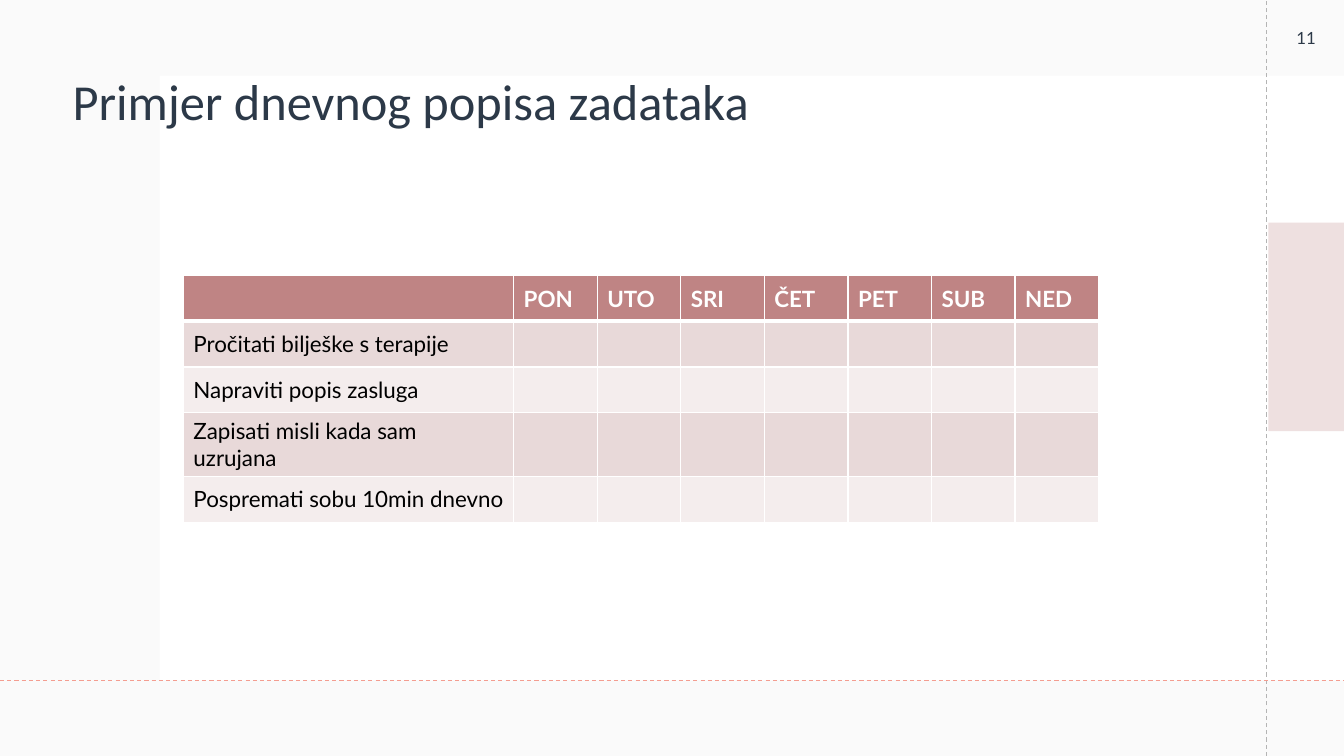
from lxml.etree import SubElement
from pptx import Presentation
from pptx.dml.color import RGBColor
from pptx.enum.dml import MSO_LINE
from pptx.enum.shapes import MSO_CONNECTOR, MSO_SHAPE
from pptx.enum.text import MSO_ANCHOR as ANCHOR, PP_ALIGN as ALIGN
from pptx.oxml.ns import qn
from pptx.util import Pt

W, H = 960, 540
EDGE = 54                      # margin band on the top, right and bottom
INK, WHITE, ROSE = "2C3948", "FFFFFF", "BF8484"
BANDS = ["E8D9D9", "F4EDED"]

DAYS = ["PON", "UTO", "SRI", "ČET", "PET", "SUB", "NED"]
TASKS = [
    "Pročitati bilješke s terapije",
    "Napraviti popis zasluga",
    "Zapisati misli kada sam uzrujana",
    "Pospremati sobu 10min dnevno",
]


def rgb(value):
    return RGBColor.from_string(value)


def add_run(p, text, size, font, color, bold=False):
    r = p.add_run()
    r.text = text
    r.font.size, r.font.name, r.font.bold = Pt(size), font, bold
    r.font.color.rgb = rgb(color)


def add_rect(s, box, color, opacity=100):
    sp = s.shapes.add_shape(MSO_SHAPE.RECTANGLE, *map(Pt, box))
    sp.shadow.inherit = False
    sp.line.fill.background()
    sp.fill.solid()
    sp.fill.fore_color.rgb = rgb(color)
    if opacity < 100:
        clr = next(sp.element.spPr.iter(qn("a:srgbClr")))
        SubElement(clr, qn("a:alpha")).set("val", str(opacity * 1000))


def add_guide(s, start, end, color):
    ln = s.shapes.add_connector(MSO_CONNECTOR.STRAIGHT, *map(Pt, start + end))
    ln.line.color.rgb = rgb(color)
    ln.line.width = Pt(0.75)
    ln.line.dash_style = MSO_LINE.DASH
    SubElement(ln.element.spPr, qn("a:effectLst"))


def add_border(cell, side, width):
    ln = SubElement(cell._tc.get_or_add_tcPr(), qn(f"a:ln{side}"))
    ln.set("w", str(Pt(width)))
    fill = SubElement(ln, qn("a:solidFill"))
    SubElement(fill, qn("a:srgbClr")).set("val", WHITE)


# Background panels and dashed guides
def add_background(s, box):
    x, y, w, h = box
    right, bottom = x + w - EDGE, y + h - EDGE
    add_rect(s, box, "F4F4F4", 45)
    add_rect(s, (x + 114, y + EDGE, w - 114, h - 2 * EDGE), WHITE)
    add_guide(s, (right - 1, y + h), (right - 1, y), "B4B4B4")
    add_guide(s, (x, bottom), (x + w, bottom), "F49D90")
    add_rect(s, (right, y + 159, EDGE, 149), ROSE, 25)


# Title placeholder, brought in front of the panels
def add_title(s, box):
    sp = s.shapes.title
    sp.left, sp.top, sp.width, sp.height = map(Pt, box)
    sp.element.getparent().append(sp.element)
    tf = sp.text_frame
    tf.word_wrap = True
    tf.vertical_anchor = ANCHOR.MIDDLE
    p = tf.paragraphs[0]
    p.alignment = ALIGN.LEFT
    p.line_spacing, p.space_before = Pt(28), Pt(10)
    add_run(p, "Primjer dnevnog popisa zadataka", 36, "Calibri", INK)


# Weekly task table
def add_task_table(s, box):
    x, y, w, h = box
    rows = [[""] + DAYS] + [[task] + [""] * len(DAYS) for task in TASKS]
    day_w = 59.7
    table = s.shapes.add_table(len(rows), len(rows[0]), *map(Pt, box)).table
    for i, col in enumerate(table.columns):
        col.width = Pt(day_w if i else w - day_w * len(DAYS))
    for i, texts in enumerate(rows):
        header = i == 0
        table.rows[i].height = Pt(h / len(rows))
        for j, text in enumerate(texts):
            cell = table.cell(i, j)
            cell.vertical_anchor = ANCHOR.MIDDLE
            for side in "LRTB":
                thick = (i, side) in [(0, "B"), (1, "T")]
                add_border(cell, side, 3 if thick else 1)
            cell.fill.solid()
            cell.fill.fore_color.rgb = rgb(ROSE if header else BANDS[(i - 1) % 2])
            if text:
                add_run(cell.text_frame.paragraphs[0], text, 16, "Lato",
                        WHITE if header else "000000", header)


# Page number in the top right corner
def add_page_number(s, box):
    tf = s.shapes.add_textbox(*map(Pt, box)).text_frame
    tf.word_wrap = True
    tf.vertical_anchor = ANCHOR.MIDDLE
    p = tf.paragraphs[0]
    p.alignment = ALIGN.CENTER
    add_run(p, "11", 12, "Lato", INK)


def main():
    prs = Presentation()
    prs.slide_width, prs.slide_height = Pt(W), Pt(H)
    s = prs.slides.add_slide(prs.slide_layouts[5])
    add_background(s, (0, 0, W, H))
    add_title(s, (44.6, 27.4, 871, 104.4))
    add_task_table(s, (131, 196.8, 653.8, 163.5))
    add_page_number(s, (W - EDGE, 0, EDGE, EDGE))
    prs.save("out.pptx")


if __name__ == "__main__":
    main()
